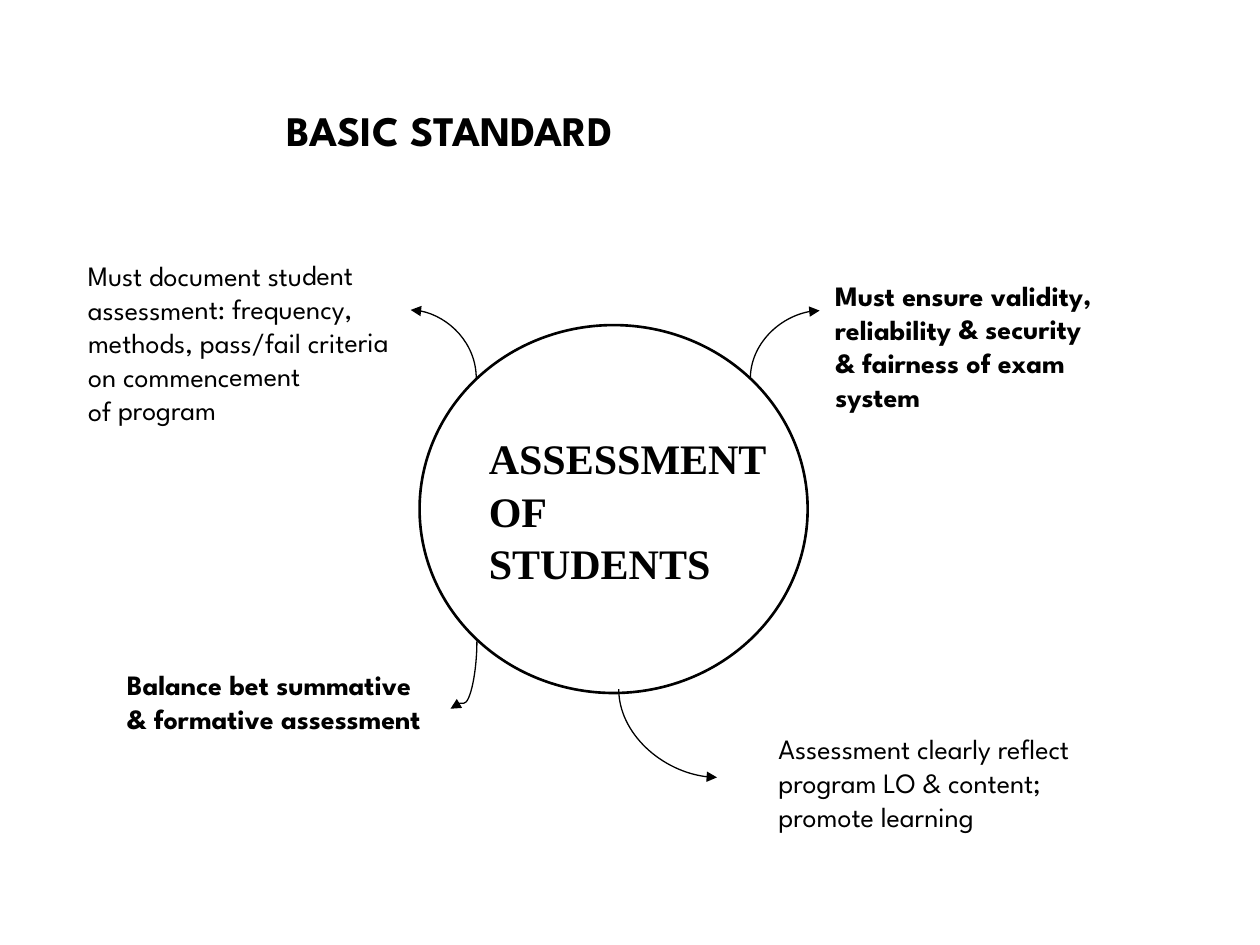
"""Build the basic standard slide on the assessment of students."""
from typing import NamedTuple

from pptx import Presentation
from pptx.dml.color import RGBColor
from pptx.enum.shapes import MSO_CONNECTOR, MSO_SHAPE
from pptx.enum.text import MSO_ANCHOR, MSO_AUTO_SIZE, PP_ALIGN
from pptx.oxml.ns import qn
from pptx.oxml.xmlchemy import OxmlElement
from pptx.util import Inches, Pt

BLACK = RGBColor(0, 0, 0)
LABEL_FONT = "League Spartan"
HUB_FONT = "Times New Roman"
CURVE = MSO_CONNECTOR.CURVE
ELLIPSE = MSO_SHAPE.OVAL
TOP, MIDDLE = MSO_ANCHOR.TOP, MSO_ANCHOR.MIDDLE
LEFT = PP_ALIGN.LEFT
NO_FIT, GROW = MSO_AUTO_SIZE.NONE, MSO_AUTO_SIZE.SHAPE_TO_FIT_TEXT
TITLE_ONLY_LAYOUT = 5
ANGLE_UNITS = 60000


class Box(NamedTuple):
    left: float
    top: float
    width: float
    height: float


class Label(NamedTuple):
    box: Box
    lines: list[str]
    bold: bool = False
    rotation: float = 0


class Arrow(NamedTuple):
    box: Box
    rotation: int
    flipped: bool = False
    preset: str = "curvedConnector2"
    bend: float | None = None


TITLE_BOX = Box(2.17, 0.78, 5.17, 0.5)
HUB_BOX = Box(3.33, 2.58, 3.08, 2.92)
LABELS = [
    Label(Box(0.91, 5.25, 2.76, 0.64),
          ["Balance bet summative", "& formative assessment"], bold=True),
    Label(Box(0.6, 2, 2.96, 1.44),
          ["Must document student", "assessment: frequency,", "methods, pass/fail criteria",
           "on commencement", "of program"], rotation=359.8),
    Label(Box(6.08, 5.76, 2.95, 0.9),
          ["Assessment clearly reflect", "program LO & content;", "promote learning"]),
    Label(Box(6.53, 2.16, 2.38, 1.17),
          ["Must ensure validity,", "reliability & security", "& fairness of exam", "system"],
          bold=True, rotation=359.8),
]
ARROWS = [
    Arrow(Box(4.95, 5.43, 0.7, 0.78), 270, flipped=True),
    Arrow(Box(5.96, 2.46, 0.54, 0.55), 270),
    Arrow(Box(3.25, 2.47, 0.54, 0.52), 90, flipped=True),
    Arrow(Box(3.41, 5.25, 0.54, 0.21), 90, preset="curvedConnector3", bend=0.92),
]


def inches(box: Box) -> list[Inches]:
    return [Inches(value) for value in box]


def write_text(shape, lines: list[str], *, size: int, font: str = LABEL_FONT,
               bold: bool = False, anchor=TOP, fit=GROW, wrap: bool = False,
               spacing: float | None = None) -> None:
    frame = shape.text_frame
    frame.word_wrap = wrap
    frame.auto_size = fit
    frame.vertical_anchor = anchor
    for index, line in enumerate(lines):
        paragraph = frame.add_paragraph() if index else frame.paragraphs[0]
        paragraph.alignment = LEFT
        paragraph.line_spacing = spacing
        run = paragraph.add_run()
        run.text = line
        run.font.name = font
        run.font.size = Pt(size)
        run.font.bold = bold
        run.font.color.rgb = BLACK


def add_title(slide, text: str) -> None:
    title = slide.shapes.title
    title.left, title.top, title.width, title.height = inches(TITLE_BOX)
    write_text(title, [text], size=24, bold=True, fit=NO_FIT, wrap=True)


def add_hub(slide, lines: list[str]) -> None:
    hub = slide.shapes.add_shape(ELLIPSE, *inches(HUB_BOX))
    hub.shadow.inherit = False
    hub.fill.background()
    hub.line.color.rgb = BLACK
    hub.line.width = Pt(1.5)
    write_text(hub, lines, size=24, font=HUB_FONT, bold=True,
               anchor=MIDDLE, fit=NO_FIT, spacing=1.05)


def add_label(slide, label: Label) -> None:
    text_box = slide.shapes.add_textbox(*inches(label.box))
    text_box.rotation = label.rotation
    write_text(text_box, label.lines, size=16, bold=label.bold)


def add_arrow(slide, arrow: Arrow) -> None:
    left, top, width, height = inches(arrow.box)
    begin_x, end_x = left, left + width
    if arrow.flipped:
        begin_x, end_x = end_x, begin_x
    connector = slide.shapes.add_connector(CURVE, begin_x, top, end_x, top + height)
    connector.line.color.rgb = BLACK
    connector.line.width = Pt(0.75)
    properties = connector._element.spPr
    properties.find(qn("a:xfrm")).set("rot", str(arrow.rotation * ANGLE_UNITS))
    geometry = properties.find(qn("a:prstGeom"))
    geometry.set("prst", arrow.preset)
    if arrow.bend is not None:
        guide = OxmlElement("a:gd")
        guide.set("name", "adj1")
        guide.set("fmla", f"val {round(arrow.bend * 100000)}")
        geometry.find(qn("a:avLst")).append(guide)
    arrowhead = OxmlElement("a:tailEnd")
    arrowhead.set("type", "triangle")
    properties.find(qn("a:ln")).append(arrowhead)
    properties.append(OxmlElement("a:effectLst"))


def main() -> None:
    presentation = Presentation()
    presentation.slide_width = Inches(10)
    presentation.slide_height = Inches(7.5)
    slide = presentation.slides.add_slide(presentation.slide_layouts[TITLE_ONLY_LAYOUT])
    add_title(slide, "BASIC STANDARD")
    add_hub(slide, ["ASSESSMENT", "OF", "STUDENTS"])
    for label in LABELS:
        add_label(slide, label)
    for arrow in ARROWS:
        add_arrow(slide, arrow)
    presentation.save("out.pptx")


if __name__ == "__main__":
    main()
